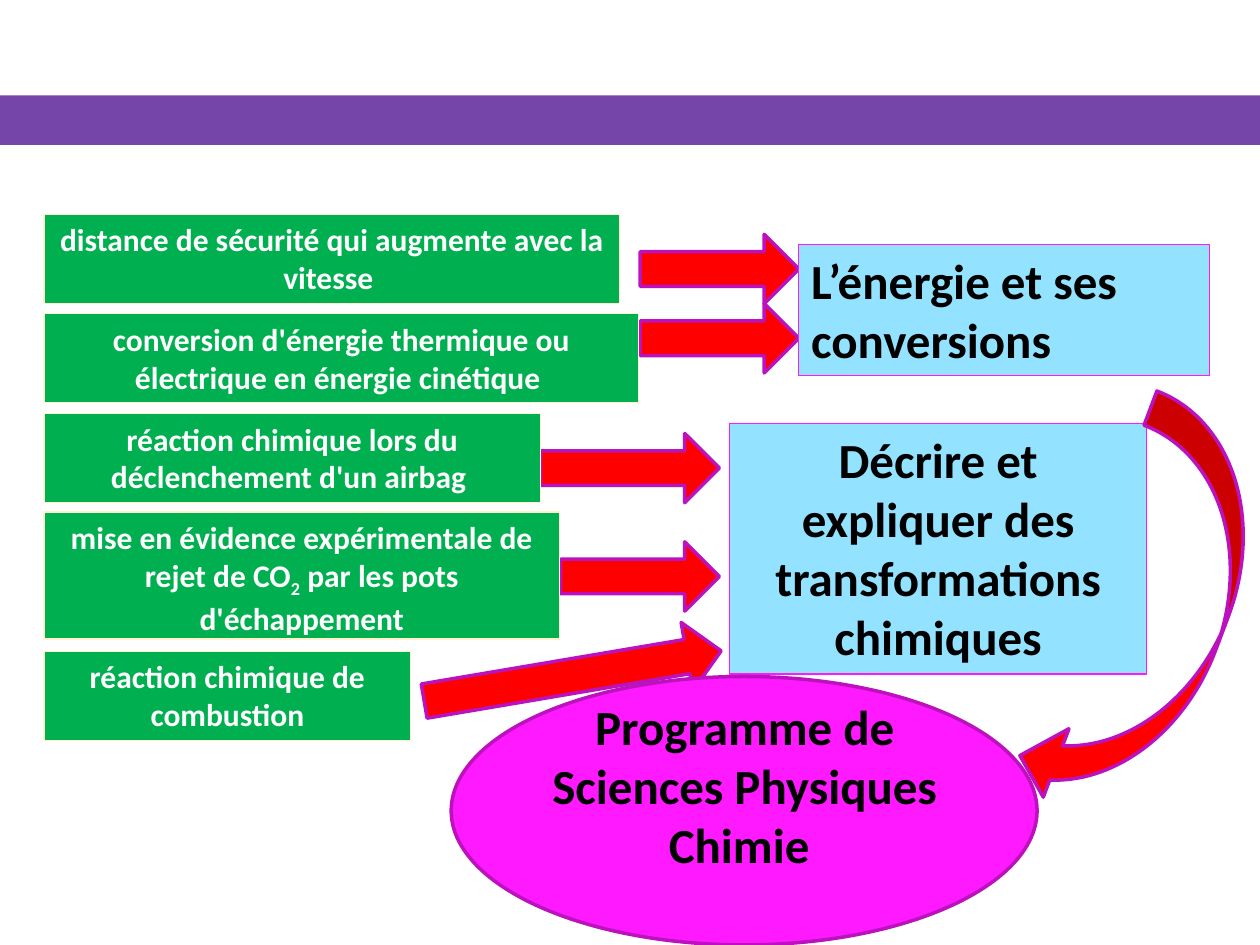
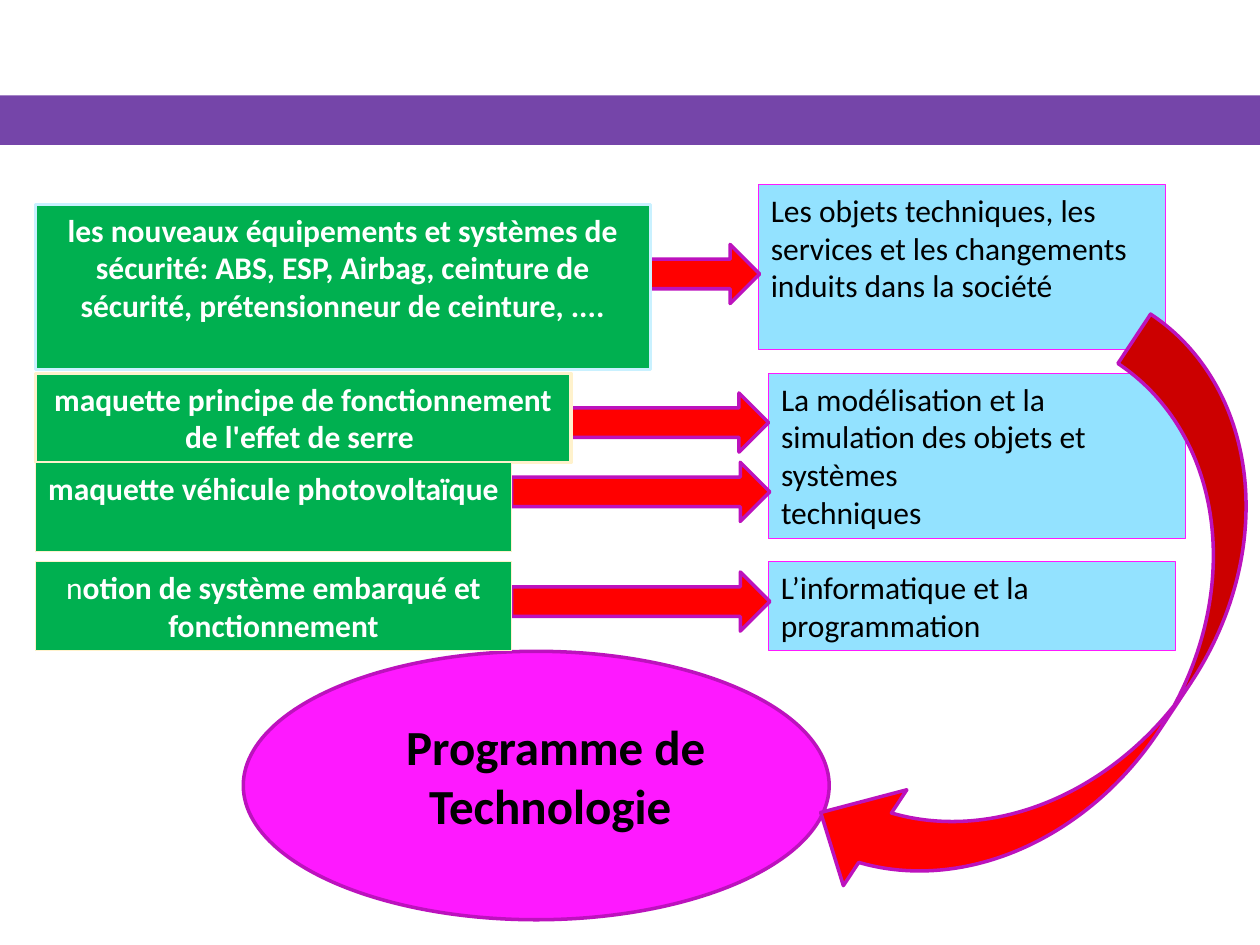
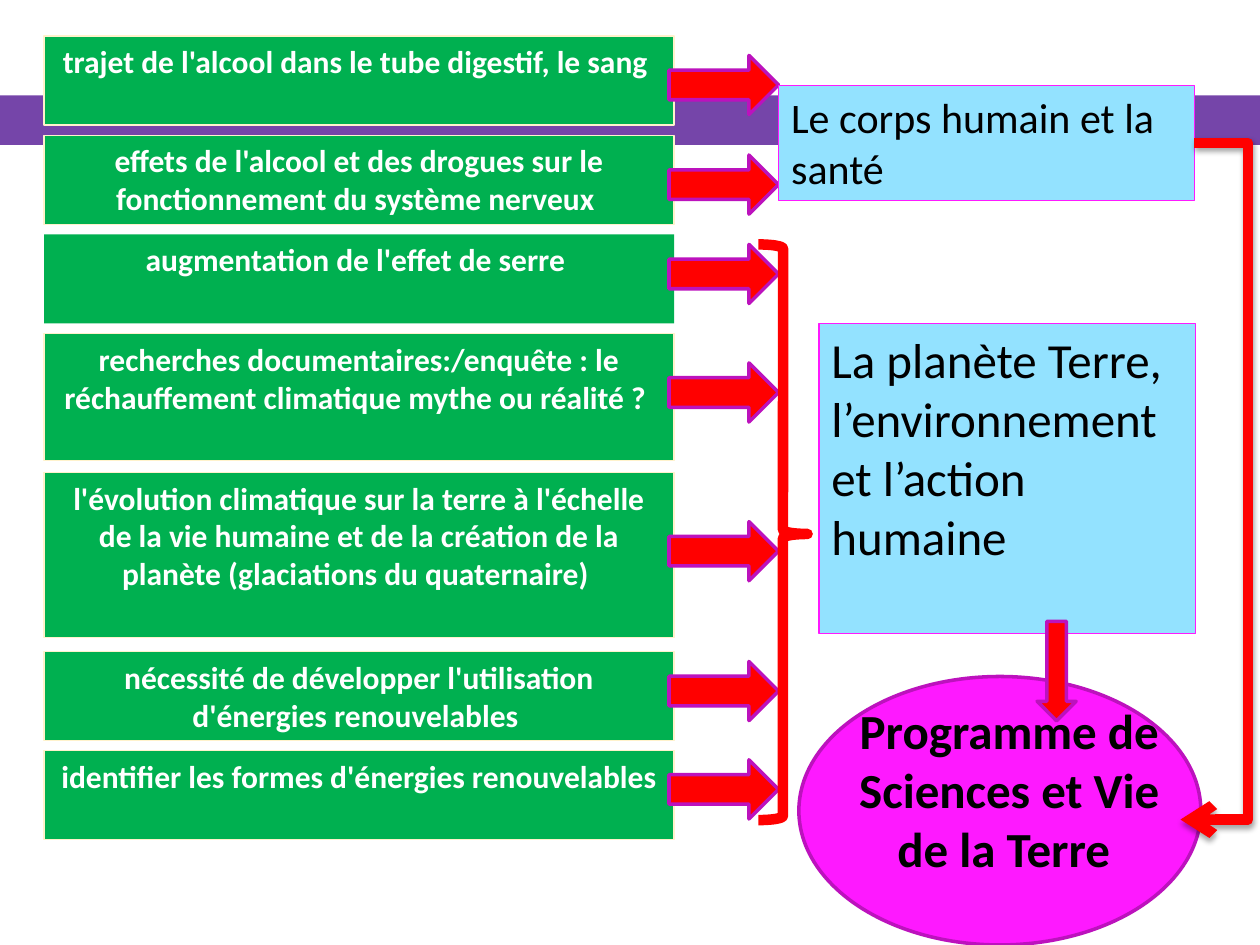
from lxml.etree import SubElement as Sub
from pptx import Presentation
from pptx.dml.color import RGBColor as Rgb
from pptx.enum.shapes import MSO_CONNECTOR as Wire, MSO_SHAPE as Form
from pptx.enum.text import MSO_ANCHOR as Anchor, PP_ALIGN as Align
from pptx.oxml.ns import qn
from pptx.util import Pt

HUES = {
    "band": "7545A9", "green": "00B050", "cream": "FFF2CC", "ice": "C9F1FF",
    "sky": "93E2FF", "pink": "FE19FF", "plum": "BC12BD", "red": "FF0000",
    "black": "000000", "white": "FFFFFF",
}
FONT = "Calibri"


def hue(name):
    """Return the named colour."""
    return Rgb.from_string(HUES[name])


def place(slide, form, spot, fill=None, edge=None, wide=0.75, turn=0, bends=()):
    """Add a preset shape at spot (left, top, width, height)."""
    shape = slide.shapes.add_shape(form, *map(Pt, spot))
    shape.shadow.inherit = False
    shape.rotation = turn
    if fill:
        shape.fill.solid()
        shape.fill.fore_color.rgb = hue(fill)
    else:
        shape.fill.background()
    if edge:
        shape.line.color.rgb = hue(edge)
        shape.line.width = Pt(wide)
    else:
        shape.line.fill.background()
    for index, bend in enumerate(bends):
        shape.adjustments[index] = bend
    return shape


def write(shape, text, size, color, bold, align):
    """Set the text of a shape, one paragraph a line."""
    frame = shape.text_frame
    frame.word_wrap = True
    frame.vertical_anchor = Anchor.TOP
    frame.text = text
    for para in frame.paragraphs:
        para.alignment = align
        for run in para.runs:
            style(run, size, color, bold)


def style(run, size, color, bold):
    """Set the font of a run."""
    font = run.font
    font.name, font.size, font.bold = FONT, Pt(size), bold
    font.color.rgb = hue(color)


def extend(shape, text, bold=True, base=0):
    """Add a run to a topic, lowered by base percent."""
    run = shape.text_frame.paragraphs[0].add_run()
    run.text = text
    style(run, 18, "white", bold)
    if base:
        run.font._element.set("baseline", str(-base * 1000))


def topic(slide, left, top, width, lines, text, edge="cream", wide=0.75, bold=True):
    """Add a green box tall enough for a number of lines."""
    spot = (left, top, width, 7.4 + 21.75 * lines)
    shape = place(slide, Form.RECTANGLE, spot, "green", edge, wide)
    write(shape, text, 18, "white", bold, Align.CENTER)
    return shape


def theme(slide, spot, text, size=18, bold=False, align=Align.LEFT):
    """Add a blue box that names a theme."""
    shape = place(slide, Form.RECTANGLE, spot, "sky", "pink")
    write(shape, text, size, "black", bold, align)
    return shape


def arrow(slide, spot, form=Form.RIGHT_ARROW, turn=0, bends=()):
    """Add a red block arrow."""
    return place(slide, form, spot, "red", "plum", 2, turn, bends)


def course(slide, spot, area, text):
    """Add the pink ellipse and its label."""
    place(slide, Form.OVAL, spot, "pink", "plum", 2)
    label = slide.shapes.add_textbox(*map(Pt, area))
    write(label, text, 28, "black", True, Align.CENTER)
    return label


def link(slide, start, end):
    """Join the right sides of two shapes with a bent arrow."""
    wire = slide.shapes.add_connector(Wire.ELBOW, 0, 0, 0, 0)
    wire.begin_connect(start, 3)
    wire.end_connect(end, 3)
    wire.line.color.rgb = hue("red")
    wire.line.width = Pt(6)
    props = wire._element.spPr
    guides = props.find(qn("a:prstGeom")).get_or_add_avLst()
    Sub(guides, qn("a:gd"), name="adj1", fmla="val -383500")
    Sub(props.find(qn("a:ln")), qn("a:tailEnd"), type="arrow")
    cast = Sub(Sub(props, qn("a:effectLst")), qn("a:outerShdw"), blurRad=str(Pt(3.1)),
               dist=str(Pt(1.8)), dir="5400000", rotWithShape="0")
    tint = Sub(cast, qn("a:srgbClr"), val=HUES["black"])
    Sub(tint, qn("a:alpha"), val="35000")


def start(deck):
    """Add a blank slide with the purple band."""
    slide = deck.slides.add_slide(deck.slide_layouts[6])
    place(slide, Form.RECTANGLE, (0, 54.5, 720, 28.3), "band")
    return slide


def physics(deck):
    """Build the physics and chemistry slide."""
    slide = start(deck)
    theme(slide, (416.9, 241.9, 238.3, 143.3),
          "Décrire et expliquer des transformations chimiques", 28, True, Align.CENTER)
    for left, top, width in ((365.8, 133.9, 90.7), (365.8, 173.5, 90.7),
                             (308.9, 247.7, 102.2), (320.4, 309.6, 90.7)):
        arrow(slide, (left, top, width, 39.6))
    arrow(slide, (241.2, 366.5, 172.1, 39.6), turn=-9.6)
    arrow(slide, (615.6, 230.4, 83.5, 243.4), Form.CURVED_LEFT_ARROW, 20.6)
    course(slide, (257.8, 386.6, 334.8, 153.4), (286.6, 394.6, 277.9, 108.7),
           "Programme de Sciences Physiques Chimie ")
    for top, width, text in (
        (122.4, 329, "distance de sécurité qui augmente avec la vitesse "),
        (179.3, 339.8, "conversion d'énergie thermique ou électrique en énergie cinétique "),
        (236.2, 283.7, "réaction chimique lors du déclenchement d'un airbag "),
        (372.2, 209.5, "réaction chimique de combustion"),
    ):
        topic(slide, 25.2, top, width, 2, text)
    fumes = topic(slide, 25.2, 292.5, 294.5, 3,
                  "mise en évidence expérimentale de rejet de CO")
    extend(fumes, "2", base=25)
    extend(fumes, " par les pots d'échappement")
    theme(slide, (456.5, 139.7, 234.7, 74.9), "L’énergie et ses conversions", 28, True)


def craft(deck):
    """Build the technology slide."""
    slide = start(deck)
    for left, top, width, height, text in (
        (433.4, 105.5, 232.6, 94.4, "Les objets techniques, les services et les "
         "changements\ninduits dans la société"),
        (439.2, 213.4, 238.3, 94.4, "La modélisation et la simulation des objets et "
         "systèmes\ntechniques"),
        (439.2, 321, 232.6, 50.9, "L’informatique et la programmation"),
    ):
        theme(slide, (left, top, width, height), text)
    for left, top, width in ((371.5, 139.7, 62.6), (326.2, 224.6, 113),
                             (292.3, 264.2, 147.6), (292.3, 326.9, 147.6)):
        arrow(slide, (left, top, width, 33.8))
    course(slide, (139, 372.2, 334.8, 153.4), (178.6, 406.1, 277.9, 74.9),
           "Programme de Technologie ")
    arrow(slide, (542.9, 185.8, 135.4, 374.4), Form.CURVED_LEFT_ARROW, 33.5,
          (0.25, 0.485, 0.25))
    topic(slide, 20.2, 116.8, 351.4, 4,
          "les nouveaux équipements et systèmes de sécurité: ABS, ESP, Airbag, "
          "ceinture de sécurité, prétensionneur de ceinture, ....", "ice", 2)
    notion = topic(slide, 20.2, 321, 272.2, 2, "n", bold=False)
    extend(notion, "otion de système embarqué et fonctionnement")
    topic(slide, 20.2, 213.4, 306, 2,
          "maquette principe de fonctionnement de l'effet de serre ", wide=2)
    topic(slide, 20.2, 264.4, 272.2, 2, "maquette véhicule photovoltaïque")


def life(deck):
    """Build the life and earth science slide."""
    slide = start(deck)
    rows = (
        (20.6, 31.7, 2, "trajet de l'alcool dans le tube digestif, le sang "),
        (77.3, 88.6, 2, "effets de l'alcool et des drogues sur le fonctionnement "
         "du système nerveux "),
        (133.9, 139.7, 2, "augmentation de l'effet de serre "),
        (190.6, 207.4, 3, "recherches documentaires:/enquête : le réchauffement "
         "climatique mythe ou réalité ? "),
        (270, 298.1, 4, "l'évolution climatique sur la terre à l'échelle de la vie humaine "
         "et de la création de la planète (glaciations du quaternaire) "),
        (372.4, 378, 2, "nécessité de développer l'utilisation d'énergies renouvelables "),
        (428.8, 434.2, 2, "identifier les formes d'énergies renouvelables"),
    )
    for top, tip, lines, text in rows:
        edge = None if text.startswith("augment") else "cream"
        topic(slide, 25.2, top, 360, lines, text, edge)
        arrow(slide, (382.3, tip, 62.6, 33.8))
    label = course(slide, (456.5, 386.6, 229.7, 153.4), (478.8, 396.7, 195.8, 143.3),
                   "Programme de Sciences et Vie de la Terre ")
    body = theme(slide, (445, 49, 237.6, 65.4), "Le corps humain et la santé", 24)
    theme(slide, (468, 185, 215.3, 177.1),
          "La planète Terre, l’environnement et l’action humaine", 28)
    place(slide, Form.RIGHT_BRACE, (433.4, 139.7, 28.1, 329), None, "red", 6,
          bends=(0.083, 0.503))
    arrow(slide, (592.6, 355, 22.3, 56.9), Form.DOWN_ARROW)
    link(slide, body, label)


def main():
    """Build and save the deck."""
    deck = Presentation()
    deck.slide_width, deck.slide_height = Pt(720), Pt(540)
    for build in (physics, craft, life):
        build(deck)
    deck.save("out.pptx")


if __name__ == "__main__":
    main()
